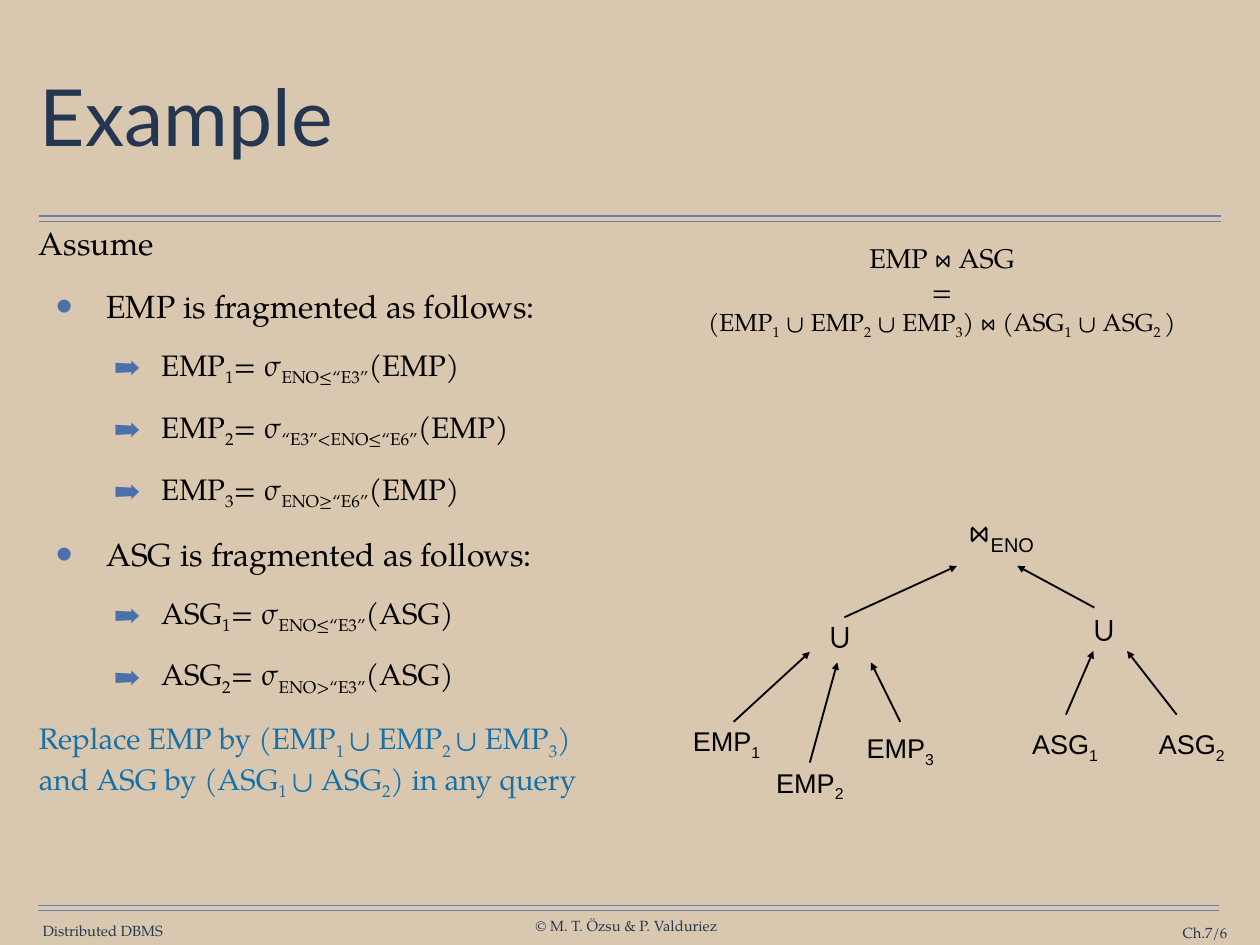
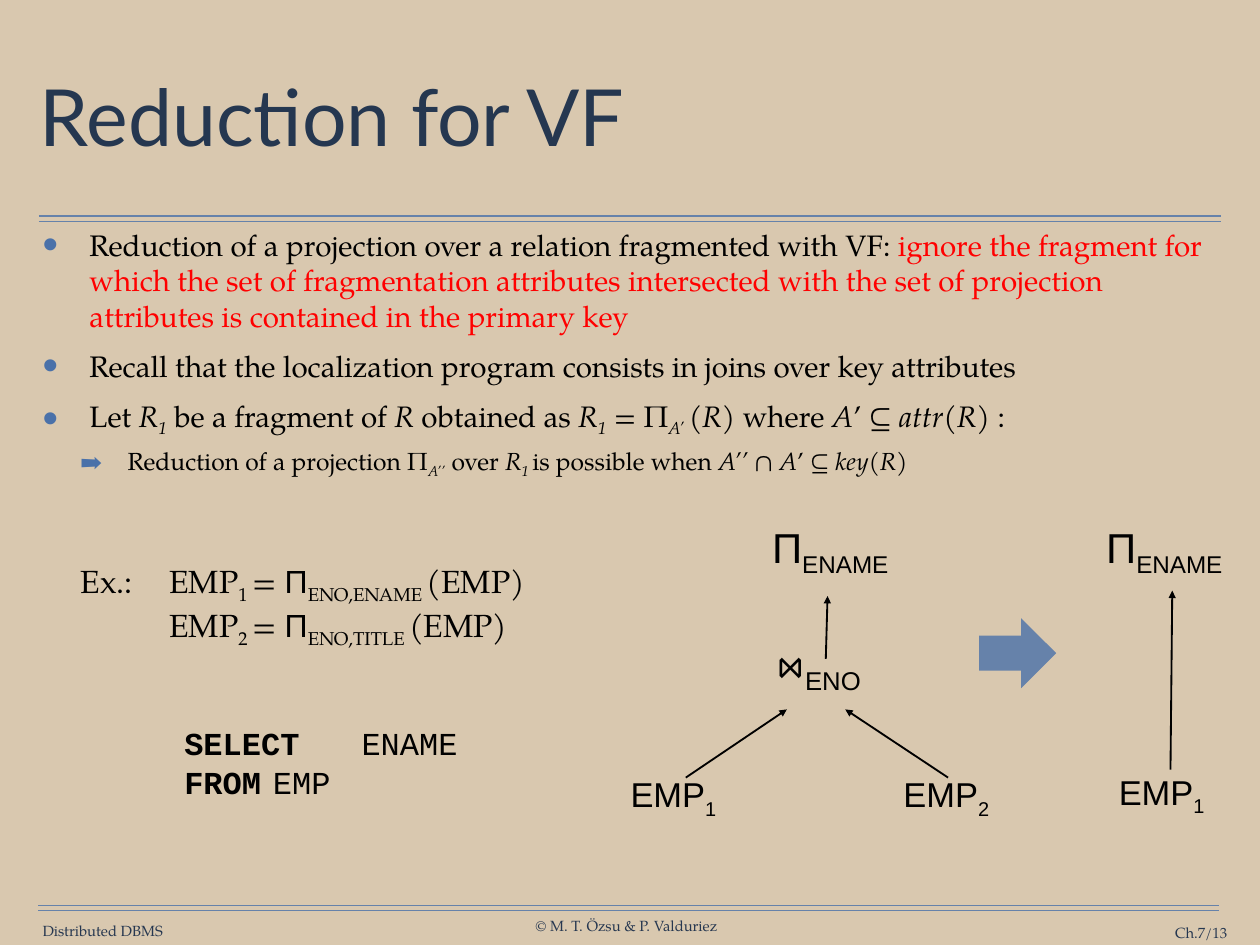
"""Build two lecture slides on query reduction over fragmented relations."""
import lxml.etree
import pptx
import pptx.dml.color
import pptx.enum.shapes
import pptx.enum.text
import pptx.oxml.ns
import pptx.util

PX = 9144
COLORS = {
    "background": "D9C8AF", "rule": "6682AA", "title": "253750", "footer": "263750",
    "text": "000000", "bullet": "4A71A9", "note": "1771A9", "highlight": "FF0000",
}
SERIF, SANS, MONO, TITLE_FONT = "TeX Gyre Pagella", "Arial", "Courier New", "Lato"
MARKS = {"~": "subscript", "*": "italic", "^": "bold", "`": "sans", "|": "highlight", "\n": "break"}
ALIGN = pptx.enum.text.PP_ALIGN
ANCHOR = pptx.enum.text.MSO_ANCHOR
STRAIGHT = pptx.enum.shapes.MSO_CONNECTOR.STRAIGHT
qn = pptx.oxml.ns.qn


def write(paragraph, marked_text, size, font=SERIF, color="text"):
    """Add runs to a paragraph, each mark switching one format on or off."""
    for mark in MARKS:
        marked_text = marked_text.replace(mark, f"\0{mark}\0")
    active = set()
    for piece in marked_text.split("\0"):
        if piece == "\n":
            paragraph.add_line_break()
        elif piece in MARKS:
            active ^= {MARKS[piece]}
        elif piece:
            run = paragraph.add_run()
            run.text = piece
            run.font.size = pptx.util.Pt(size)
            run.font.name = SANS if "sans" in active else font
            run.font.bold = "bold" in active
            run.font.italic = "italic" in active
            shade = COLORS["highlight" if "highlight" in active else color]
            run.font.color.rgb = pptx.dml.color.RGBColor.from_string(shade)
            if "subscript" in active:
                run._r.get_or_add_rPr().set("baseline", "-25000")


def add_label(slide, box, lines, font=SANS, color="text", align=ALIGN.CENTER,
              spacing=None, anchor=ANCHOR.TOP, wrap=False):
    """Add a text box without insets, one paragraph for each (text, size) line."""
    frame = slide.shapes.add_textbox(*(value * PX for value in box)).text_frame
    frame.margin_left = frame.margin_right = frame.margin_top = frame.margin_bottom = 0
    frame.word_wrap = wrap
    frame.vertical_anchor = anchor
    for index, (text, size) in enumerate(lines):
        paragraph = frame.add_paragraph() if index else frame.paragraphs[0]
        paragraph.alignment = align
        if spacing:
            paragraph.line_spacing = pptx.util.Pt(spacing)
        write(paragraph, text, size, font, color)


STYLES = {
    "lead": dict(size=26, line=34.1, after=8.5),
    "item": dict(size=26, left=76, hang=57, before=12, after=7.1, bullet="•"),
    "fragment": dict(size=24, level=1, left=138, hang=53, line=31.3, before=12, after=7.1, bullet="➡"),
    "note": dict(size=24, before=12, color="note"),
    "point": dict(size=24, left=53, hang=53, before=12, bullet="•"),
    "subpoint": dict(size=20, level=1, left=96, hang=53, before=6, bullet="➡"),
    "example": dict(size=26, level=1, left=43, before=67),
    "query": dict(size=26, level=1, left=160, before=61, font=MONO),
    "query more": dict(size=26, level=1, left=160, font=MONO),
}
BULLET_SIZES = {"•": "150000", "➡": "85000"}

SLIDES = [
    dict(
        title="Example", page="Ch.7/6", body_box=(38, 242, 658, 760),
        body=[
            ("lead", "Assume"),
            ("item", "EMP is fragmented as follows:"),
            ("fragment", "EMP~1~= σ~ENO≤“E3”~(EMP)"),
            ("fragment", "EMP~2~= σ~“E3”<ENO≤“E6”~(EMP)"),
            ("fragment", "EMP~3~= σ~ENO≥“E6”~(EMP)"),
            ("item", "ASG is fragmented as follows:"),
            ("fragment", "ASG~1~= σ~ENO≤“E3”~(ASG)"),
            ("fragment", "ASG~2~= σ~ENO>“E3”~(ASG)"),
            ("note", "Replace EMP by (EMP~1 ~∪ EMP~2 ~∪ EMP~3~) and ASG by (ASG~1 ~∪ ASG~2~) in any query"),
        ],
        labels=[
            ("⋈`~ENO~`", 28, 31.3, SERIF, (1078, 585, 104, 44)),
            ("∪", 28, 31.3, SANS, (933, 697, 30, 44)),
            ("∪", 28, 31.3, SANS, (1231, 689, 30, 44)),
            ("EMP~1~", 22, 27, SANS, (781, 822, 78, 35)),
            ("EMP~2~", 22, 27, SANS, (875, 869, 78, 35)),
            ("EMP~3~", 22, 27, SANS, (977, 830, 78, 35)),
            ("ASG~1~", 22, 27, SANS, (1164, 826, 76, 35)),
            ("ASG~2~", 22, 27, SANS, (1307, 826, 76, 35)),
        ],
        arrows=[
            (1235, 686, 1148, 639), (953, 697, 1080, 639), (914, 861, 945, 748),
            (828, 815, 914, 736), (1016, 815, 983, 748), (1328, 807, 1272, 735),
            (1203, 807, 1234, 735),
        ],
    ),
    dict(
        title="Reduction for VF", page="Ch.7/13", body_box=(42, 250, 1344, 709),
        body=[
            ("point", "Reduction of a projection over a relation fragmented with VF: |ignore the fragment for "
                      "which the set of fragmentation attributes intersected with the set of projection "
                      "attributes is contained in the primary key|"),
            ("point", "Recall that the localization program consists in joins over key attributes"),
            ("point", "Let *R~1~* be a fragment of *R *obtained as *R~1~* = Π~*A’ *~(*R*) where *A*’ ⊆ *attr(R) *:"),
            ("subpoint", "Reduction of a projection Π~*A’’*~ over *R~1 ~*is possible when *A’’* ∩ *A*’ ⊆ *key(R)*"),
            ("example", "Ex.:\tEMP~1 ~= `Π`~ENO,ENAME ~(EMP)\n\tEMP~2 ~= `Π`~ENO,TITLE ~(EMP)"),
            ("query", "^SELECT\t^ENAME"),
            ("query more", "^FROM\t^EMP"),
        ],
        labels=[
            ("Π~ENAME~", 34, 41.2, SANS, (862, 596, 150, 58)),
            ("⋈`~ENO~`", 36, 31.3, SERIF, (861, 742, 126, 47)),
            ("EMP~1~", 28, 34.1, SANS, (710, 879, 100, 47)),
            ("EMP~2~", 28, 34.1, SANS, (1018, 879, 100, 47)),
            ("Π~ENAME~", 34, 41.2, SANS, (1239, 596, 150, 58)),
            ("EMP~1~", 28, 34.1, SANS, (1261, 876, 100, 47)),
        ],
        arrows=[
            (774, 878, 888, 801), (1070, 878, 954, 801), (932, 744, 934, 673), (1321, 869, 1323, 667),
        ],
    ),
]

presentation = pptx.Presentation()
presentation.slide_width = 1422 * PX
presentation.slide_height = 1067 * PX
background = presentation.slide_master.background.fill
background.solid()
background.fore_color.rgb = pptx.dml.color.RGBColor.from_string(COLORS["background"])

for content in SLIDES:
    slide = presentation.slides.add_slide(presentation.slide_layouts[1])
    title, body = slide.placeholders
    boxes = [(title, (39, 49, 1344, 176), ANCHOR.MIDDLE), (body, content["body_box"], ANCHOR.TOP)]
    for placeholder, box, anchor in boxes:
        placeholder.left, placeholder.top, placeholder.width, placeholder.height = (value * PX for value in box)
        frame = placeholder.text_frame
        frame.margin_left = frame.margin_right = frame.margin_top = frame.margin_bottom = 6 * PX
        frame.auto_size = pptx.enum.text.MSO_AUTO_SIZE.NONE
        frame.word_wrap = True
        frame.vertical_anchor = anchor

    heading = title.text_frame.paragraphs[0]
    heading.alignment = ALIGN.LEFT
    heading.line_spacing = 0.9
    write(heading, content["title"], 64, TITLE_FONT, "title")

    for index, (name, text) in enumerate(content["body"]):
        style = STYLES[name]
        paragraph = body.text_frame.add_paragraph() if index else body.text_frame.paragraphs[0]
        paragraph.alignment = ALIGN.LEFT
        paragraph.level = style.get("level", 0)
        paragraph.space_before = pptx.util.Pt(style.get("before", 0) if index else 0)
        paragraph.space_after = pptx.util.Pt(style.get("after", 0))
        paragraph.line_spacing = pptx.util.Pt(style["line"]) if "line" in style else 1.0
        properties = paragraph._p.get_or_add_pPr()
        properties.set("marL", str(style.get("left", 0) * PX))
        properties.set("indent", str(-style.get("hang", 0) * PX))
        properties.set("defTabSz", str(100 * PX))
        if "bullet" in style:
            bullet_color = lxml.etree.SubElement(properties, qn("a:buClr"))
            lxml.etree.SubElement(bullet_color, qn("a:srgbClr"), val=COLORS["bullet"])
            lxml.etree.SubElement(properties, qn("a:buSzPct"), val=BULLET_SIZES[style["bullet"]])
            lxml.etree.SubElement(properties, qn("a:buChar"), char=style["bullet"])
        else:
            lxml.etree.SubElement(properties, qn("a:buNone"))
        write(paragraph, text, style["size"], style.get("font", SERIF), style.get("color", "text"))

    rules = [(44, y, 1378, y, "rule", 1) for y in (244, 250)]
    rules += [(43, y, 1376, y, "rule", 1) for y in (1022, 1028)]
    arrows = [(*ends, "text", 1.5) for ends in content["arrows"]]
    for *ends, color, width in rules + arrows:
        connector = slide.shapes.add_connector(STRAIGHT, *(value * PX for value in ends))
        connector.line.color.rgb = pptx.dml.color.RGBColor.from_string(COLORS[color])
        connector.line.width = pptx.util.Pt(width)
        if color == "text":
            lxml.etree.SubElement(connector.line._get_or_add_ln(), qn("a:tailEnd"), type="triangle")
        lxml.etree.SubElement(connector._element.spPr, qn("a:effectLst"))

    footers = [
        ("Distributed DBMS", (47, 1041, 138, 20), ALIGN.CENTER),
        ("© M. T. Özsu & P. Valduriez", (603, 1035, 208, 20), ALIGN.CENTER),
        (content["page"], (1231, 1043, 154, 20), ALIGN.RIGHT),
    ]
    for text, box, align in footers:
        add_label(slide, box, [(text, 12)], SERIF, "footer", align,
                  anchor=ANCHOR.MIDDLE, wrap=align == ALIGN.RIGHT)

    for text, size, spacing, font, box in content["labels"]:
        add_label(slide, box, [(text, size)], font, spacing=spacing)

example_slide, reduction_slide = presentation.slides
join_lines = [
    ("EMP ⋈ ASG", 22),
    ("=", 22),
    ("(EMP~1~ ∪ EMP~2~ ∪ EMP~3~) ⋈ (ASG~1~ ∪ ASG~2 ~)", 20),
]
add_label(example_slide, (737, 273, 652, 108), join_lines, SERIF, wrap=True)

block_arrow = reduction_slide.shapes.add_shape(
    pptx.enum.shapes.MSO_SHAPE.RIGHT_ARROW, *(value * PX for value in (1105, 698, 87, 79)))
block_arrow.shadow.inherit = False
block_arrow.fill.solid()
block_arrow.fill.fore_color.rgb = pptx.dml.color.RGBColor.from_string(COLORS["rule"])
block_arrow.line.fill.background()

presentation.save("out.pptx")
